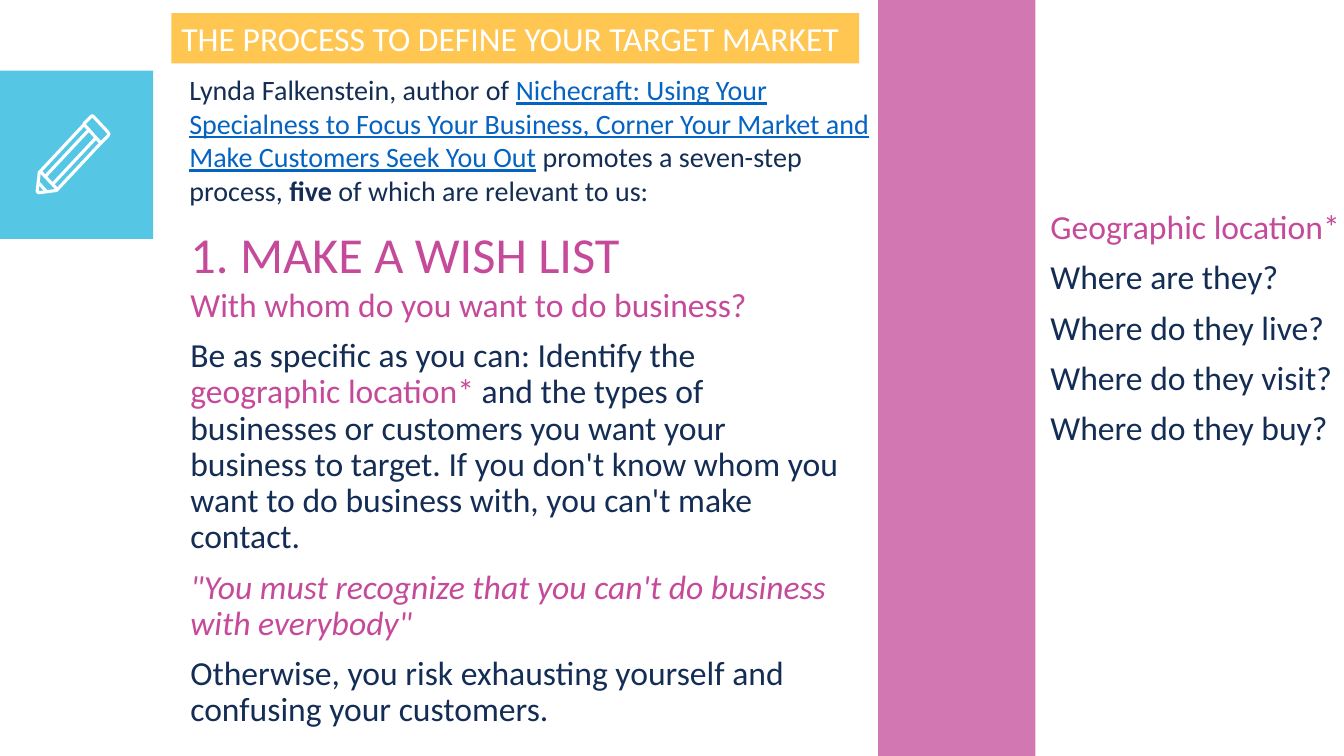
from dataclasses import dataclass

from lxml.etree import SubElement
from pptx import Presentation
from pptx.dml.color import RGBColor
from pptx.enum.shapes import MSO_SHAPE
from pptx.enum.text import MSO_ANCHOR, PP_ALIGN
from pptx.oxml.ns import qn
from pptx.util import Inches, Pt


@dataclass(frozen=True)
class Theme:
    font: str = "Calibri"
    blue: str = "1EB3DD"
    pink: str = "C54A9A"
    yellow: str = "FFC652"
    navy: str = "142D55"
    link: str = "0563C1"
    white: str = "FFFFFF"
    heading_size: int = 36
    body_size: int = 24
    intro_size: int = 20
    pencil_line: float = 2.25
    band_opacity: int = 75


THEME = Theme()
COLUMN = ROW = Inches(0.1)
PENCIL_UNIT = Inches(0.01)

PENCIL_STROKES = [
    ([(107, 131), (93, 116), (92, 115), (91, 115), (90, 116), (83, 123),
      (100, 142), (107, 135), (108, 133)], True),
    ([(95, 137), (52, 183)], False),
    ([(83, 124), (40, 170), (39, 171), (37, 189), (37, 190), (38, 191),
      (40, 191), (56, 189), (57, 188), (100, 142)], False),
    ([(45, 175), (88, 129)], False),
    ([(46, 190), (39, 182)], False),
    ([(40, 170), (57, 188)], False),
]


def grid_area(left, top, width, height):
    return (round(left * COLUMN), round(top * ROW),
            round(width * COLUMN), round(height * ROW))


def add_block(page, area, color, opacity=100):
    block = page.shapes.add_shape(MSO_SHAPE.RECTANGLE, *grid_area(*area))
    block.shadow.inherit = False
    block.fill.solid()
    block.fill.fore_color.rgb = RGBColor.from_string(color)
    block.line.fill.background()
    if opacity < 100:
        color_node = block.fill._xPr.find(qn("a:solidFill"))[0]
        SubElement(color_node, qn("a:alpha"), val=str(opacity * 1000))
    return block


def add_span(para, text, size, color=THEME.navy, bold=False, italic=False, underline=False):
    span = para.add_run()
    span.text = text
    span.font.name = THEME.font
    span.font.size = Pt(size)
    span.font.color.rgb = RGBColor.from_string(color)
    span.font.bold = bold
    span.font.italic = italic
    span.font.underline = underline


def write_text(box, paragraphs, size, spacing=1.0, space_before=0):
    frame = box.text_frame
    frame.word_wrap = True
    frame.vertical_anchor = MSO_ANCHOR.TOP
    for index, spans in enumerate(paragraphs):
        para = frame.add_paragraph() if index else frame.paragraphs[0]
        para.alignment = PP_ALIGN.LEFT
        para.line_spacing = spacing
        para.space_before = Pt(space_before if index else 0)
        for text, formatting in spans:
            add_span(para, text, size, **formatting)


def add_text(page, area, paragraphs, size, **spacing):
    box = page.shapes.add_textbox(*grid_area(*area))
    write_text(box, paragraphs, size, **spacing)


def add_pencil(page):
    pencil = page.shapes.add_group_shape()
    for points, closed in PENCIL_STROKES:
        builder = pencil.shapes.build_freeform(*points[0], scale=PENCIL_UNIT)
        builder.add_line_segments(points[1:], close=closed)
        stroke = builder.convert_to_shape()
        stroke.shadow.inherit = False
        stroke.fill.background()
        stroke.line.color.rgb = RGBColor.from_string(THEME.white)
        stroke.line.width = Pt(THEME.pencil_line)


def main():
    deck = Presentation()
    deck.slide_width = Inches(13.33)
    deck.slide_height = Inches(7.5)
    page = deck.slides.add_slide(deck.slide_layouts[6])
    pink = {"color": THEME.pink}
    body_spacing = {"spacing": 0.9, "space_before": 10}

    add_block(page, (-0.4, 7, 15.6, 16.7), THEME.blue, THEME.band_opacity)
    add_block(page, (87.1, -0.1, 15.6, 75.1), THEME.pink, THEME.band_opacity)
    add_pencil(page)

    add_text(page, (17.9, 22.3, 69.2, 15.1), [[("1. MAKE A WISH LIST", pink)]],
             THEME.heading_size, **body_spacing)
    add_text(page, (17.9, 28.1, 67.3, 42), [
        [("With whom do you want to do business?", pink)],
        [("Be as specific as you can: Identify the ", {}),
         ("geographic location* ", pink),
         ("and the types of businesses or customers you want your business to target. "
          "If you don't know whom you want to do business with, you can't make contact.", {})],
        [('"You must recognize that you can\'t do business with everybody"',
          {"color": THEME.pink, "italic": True})],
        [("Otherwise, you risk exhausting yourself and confusing your customers.", {})],
    ], THEME.body_size, **body_spacing)

    questions = ["Where are they?", "Where do they live?",
                 "Where do they visit?", "Where do they buy?"]
    add_text(page, (103.2, 20.4, 37.1, 29.8),
             [[("Geographic location*", pink)]] + [[(question, {})] for question in questions],
             THEME.body_size, **body_spacing)

    title_bar = add_block(page, (17, 1.3, 68.2, 5), THEME.yellow)
    write_text(title_bar, [[("THE PROCESS TO DEFINE YOUR TARGET MARKET",
                             {"color": THEME.white})]], THEME.body_size)
    add_text(page, (17.8, 6.7, 70.3, 14.5), [[
        ("Lynda Falkenstein, author of ", {}),
        ("Nichecraft: Using Your Specialness to Focus Your Business, "
         "Corner Your Market and Make Customers Seek You Out",
         {"color": THEME.link, "underline": True}),
        (" promotes a seven-step process, ", {}),
        ("five", {"bold": True}),
        (" of which are relevant to us:", {}),
    ]], THEME.intro_size)

    deck.save("out.pptx")


if __name__ == "__main__":
    main()
